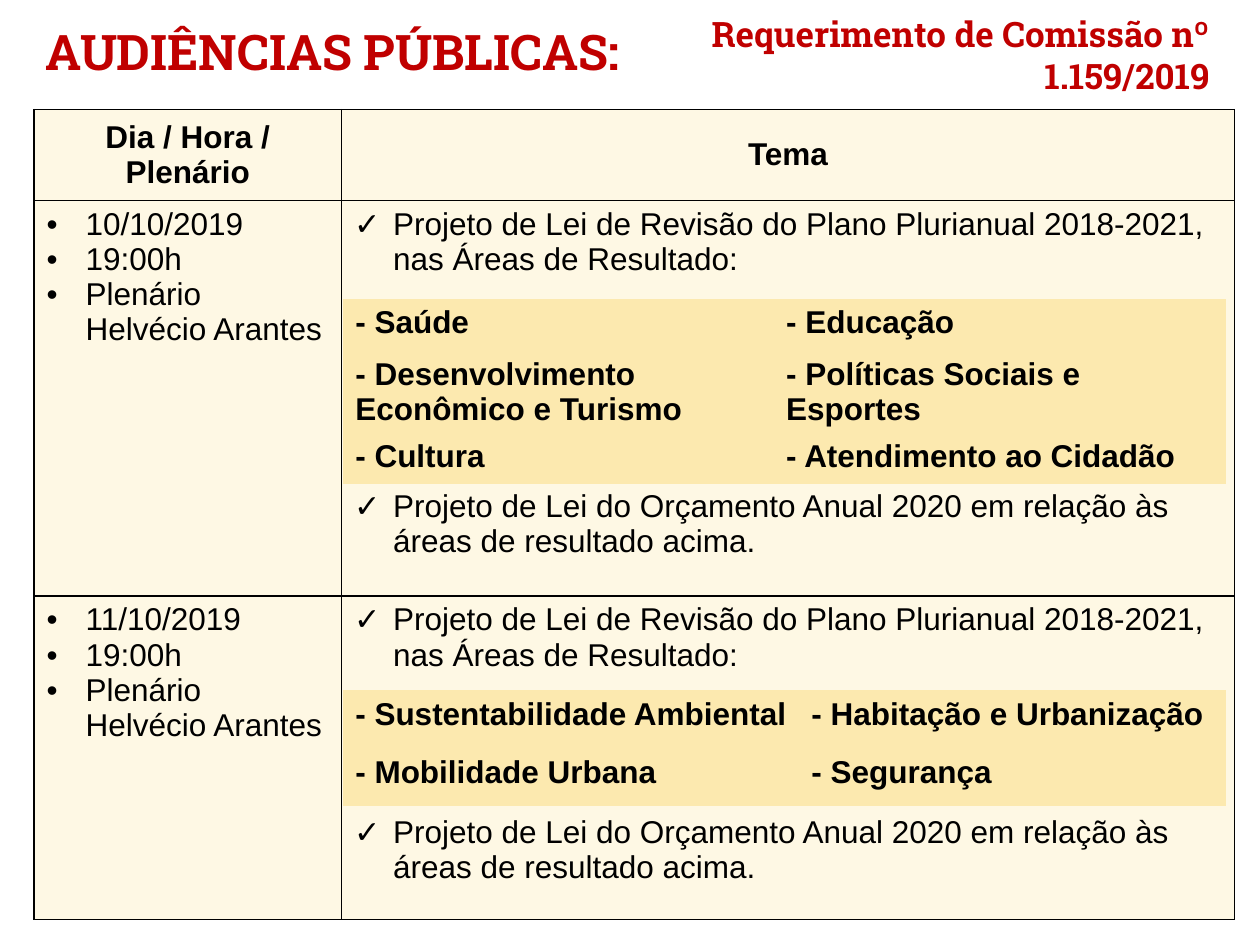
from lxml import etree
from pptx import Presentation
from pptx.dml.color import RGBColor
from pptx.enum.text import MSO_ANCHOR, MSO_AUTO_SIZE, PP_ALIGN
from pptx.oxml.ns import qn
from pptx.util import Inches, Pt

RED = RGBColor(0xC0, 0x00, 0x00)
BLACK = RGBColor(0x00, 0x00, 0x00)
CREAM = RGBColor(0xFE, 0xF8, 0xE4)
GOLD = RGBColor(0xFC, 0xE9, 0xAF)
LEFT, CENTER, RIGHT = PP_ALIGN.LEFT, PP_ALIGN.CENTER, PP_ALIGN.RIGHT
MIDDLE = MSO_ANCHOR.MIDDLE
FIT_SHAPE = MSO_AUTO_SIZE.SHAPE_TO_FIT_TEXT
TITLE_ONLY = 5
PLAIN_TABLE = "{2D5ABB26-0587-4C30-8999-92F81FD0307C}"
BODY_LINE = 20.2  # height in points of one 18 pt line

HEADINGS = ["Dia / Hora / Plenário", "Tema"]
REVISION = "Projeto de Lei de Revisão do Plano Plurianual 2018-2021, nas Áreas de Resultado:"
BUDGET = "Projeto de Lei do Orçamento Anual 2020 em relação às áreas de resultado acima."
VENUE = "Plenário Helvécio Arantes"
# date, lines kept free between the two bills for the list of areas
HEARINGS = [("10/10/2019", 6), ("11/10/2019", 4)]
FIRST_AREAS = [
    ["- Saúde", "- Educação"],
    ["- Desenvolvimento Econômico e Turismo", "- Políticas Sociais e\nEsportes"],
    ["- Cultura", "- Atendimento ao Cidadão"],
]
SECOND_AREAS = [
    ["- Sustentabilidade Ambiental", "- Habitação e Urbanização"],
    ["- Mobilidade Urbana", "- Segurança"],
]


def style(paragraph, size=18, name="Arial", color=BLACK, bold=False, align=LEFT):
    paragraph.alignment = align
    font = paragraph.font
    font.size, font.name, font.bold = Pt(size), name, bold
    font.color.rgb = color


def add_bullet(paragraph, mark):
    properties = paragraph._p.get_or_add_pPr()
    properties.set("marL", str(Inches(0.31)))
    properties.set("indent", str(-Inches(0.31)))
    etree.SubElement(properties, qn("a:buFont"), typeface="Arial")
    etree.SubElement(properties, qn("a:buChar"), char=mark)


def add_borders(cell):
    properties = cell._tc.get_or_add_tcPr()
    for side in ("lnL", "lnR", "lnT", "lnB"):
        line = etree.SubElement(properties, qn(f"a:{side}"), w=str(Pt(1)))
        fill = etree.SubElement(line, qn("a:solidFill"))
        etree.SubElement(fill, qn("a:srgbClr"), val=str(BLACK))


def add_grid(slide, left, top, widths, heights, color):
    """Add an unstyled table with one fill colour; sizes in inches."""
    table = slide.shapes.add_table(
        len(heights), len(widths), Inches(left), Inches(top),
        Inches(sum(widths)), Inches(sum(heights))).table
    table.first_row = table.horz_banding = False
    table._tbl.tblPr.find(qn("a:tableStyleId")).text = PLAIN_TABLE
    for column, width in zip(table.columns, widths):
        column.width = Inches(width)
    for row, height in zip(table.rows, heights):
        row.height = Inches(height)
    for cell in table.iter_cells():
        cell.fill.solid()
        cell.fill.fore_color.rgb = color
    return table


def fill_list(cell, items, mark):
    cell.text = "\n".join(items)
    for paragraph in cell.text_frame.paragraphs:
        add_bullet(paragraph, mark)
        style(paragraph)


def add_schedule(slide, left, top, widths, heights):
    schedule = add_grid(slide, left, top, widths, heights, CREAM)
    for cell in schedule.iter_cells():
        fill = cell._tc.tcPr.find(qn("a:solidFill"))
        add_borders(cell)
        cell._tc.tcPr.append(fill)  # the fill comes after the borders
    for column, heading in enumerate(HEADINGS):
        cell = schedule.cell(0, column)
        cell.text = heading
        cell.vertical_anchor = MIDDLE
        style(cell.text_frame.paragraphs[0], bold=True, align=CENTER)
    for row, (date, free_lines) in enumerate(HEARINGS, 1):
        fill_list(schedule.cell(row, 0), [date, "19:00h", VENUE], "•")
        theme = schedule.cell(row, 1)
        fill_list(theme, [REVISION, BUDGET], "✓")
        theme.text_frame.paragraphs[1].space_before = Pt(round(free_lines * BODY_LINE))


def add_areas(slide, left, top, widths, heights, areas):
    grid = add_grid(slide, left, top, widths, heights, GOLD)
    for cell, area in zip(grid.iter_cells(), sum(areas, [])):
        cell.text = area
        cell.margin_right = cell.margin_bottom = 0
        for paragraph in cell.text_frame.paragraphs:
            style(paragraph, bold=True)


def add_header(slide):
    title = slide.shapes.title
    title.left, title.top = Inches(0.26), Inches(0.13)
    title.width, title.height = Inches(5.21), Inches(0.55)
    title.text_frame.text = "AUDIÊNCIAS PÚBLICAS:"
    title.text_frame.vertical_anchor = MIDDLE
    style(title.text_frame.paragraphs[0], 28, "Roboto Slab", RED, True)

    request = slide.shapes.add_textbox(
        Inches(5.31), Inches(0.05), Inches(4.39), Inches(0.77)).text_frame
    request.word_wrap = True
    request.auto_size = FIT_SHAPE
    request.text = "Requerimento de Comissão nº 1.159/2019"
    style(request.paragraphs[0], 20, "Roboto Slab", RED, True, RIGHT)


def main():
    deck = Presentation()
    deck.slide_width, deck.slide_height = Inches(10), Inches(7.5)
    slide = deck.slides.add_slide(deck.slide_layouts[TITLE_ONLY])
    add_header(slide)
    add_schedule(slide, 0.27, 0.87, [2.44, 7.09], [0.72, 3.14, 2.57])
    add_areas(slide, 2.72, 2.37, [3.42, 3.59], [0.41, 0.65, 0.41], FIRST_AREAS)
    add_areas(slide, 2.72, 5.48, [3.62, 3.39], [0.46, 0.46], SECOND_AREAS)
    deck.save("out.pptx")


if __name__ == "__main__":
    main()
